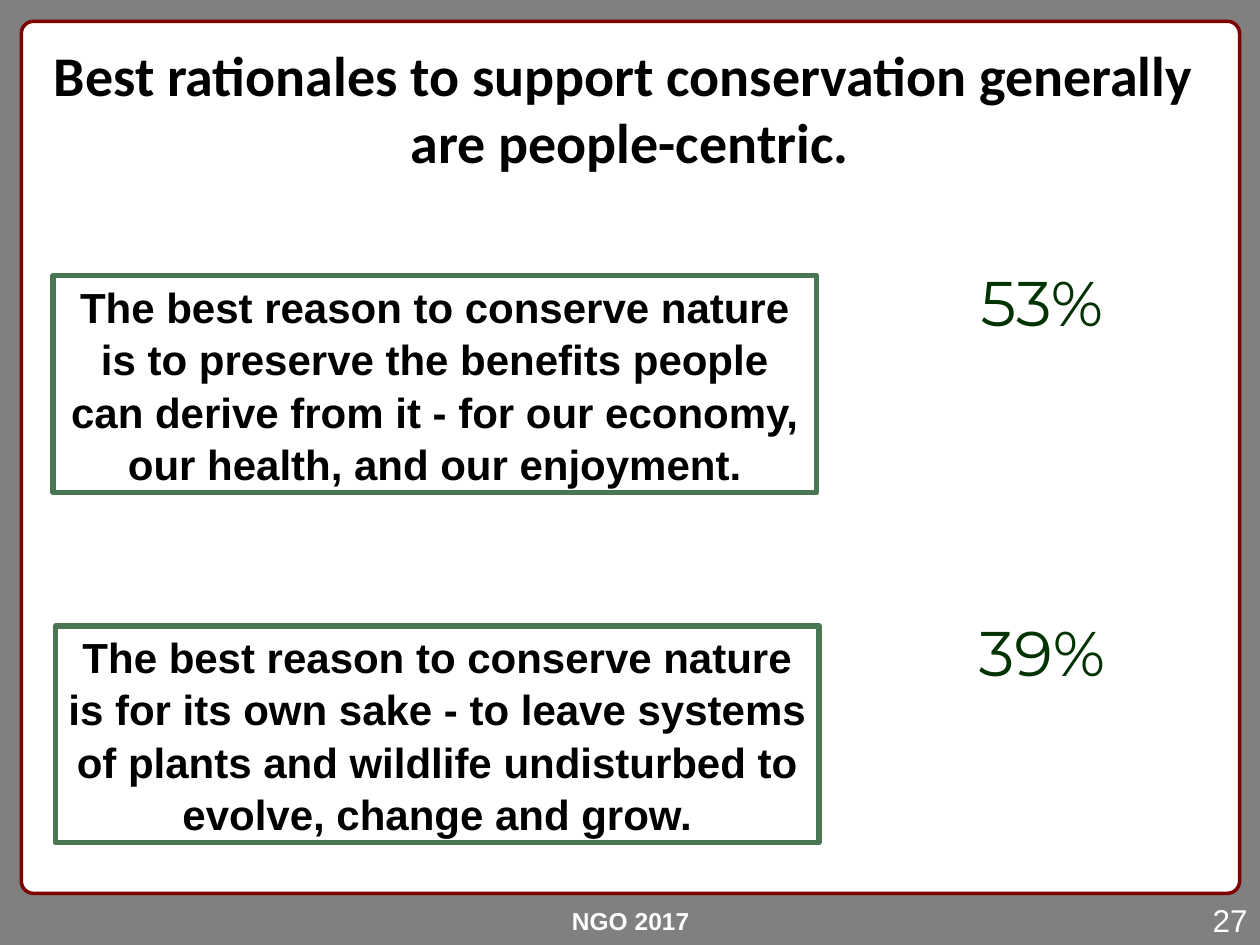
import pptx
import pptx.util
import pptx.dml.color
import pptx.enum.shapes
import pptx.enum.text

Cm = pptx.util.Cm
Pt = pptx.util.Pt
SHAPE = pptx.enum.shapes.MSO_SHAPE
ALIGN = pptx.enum.text.PP_ALIGN
ANCHOR = pptx.enum.text.MSO_ANCHOR
HUES = {"grey": "808080", "white": "FFFFFF", "red": "800000",
        "green": "4B7654", "dark": "003300", "black": "000000"}


def tint(name):
    return pptx.dml.color.RGBColor.from_string(HUES[name])


def write(text, box, size, font="Arial", hue="black", bold=False,
          align=ALIGN.CENTER, anchor=ANCHOR.TOP, wrap=True, gap=None, edge=None):
    """Add text in box (left, top, width, height in cm), framed if edge is given."""
    area = [Cm(n) for n in box]
    if edge:
        shape = slide.shapes.add_shape(SHAPE.RECTANGLE, *area)
        shape.shadow.inherit = False
        shape.fill.solid()
        shape.fill.fore_color.rgb = tint("white")
        shape.line.color.rgb = tint(edge)
        shape.line.width = Pt(3)
    else:
        shape = slide.shapes.add_textbox(*area)
    frame = shape.text_frame
    frame.word_wrap = wrap
    frame.vertical_anchor = anchor
    frame.text = text
    for para in frame.paragraphs:
        para.alignment = align
        if gap:
            para.line_spacing = gap
        for run in para.runs:
            run.font.name = font
            run.font.size = Pt(size)
            run.font.bold = bold
            run.font.color.rgb = tint(hue)


deck = pptx.Presentation()
deck.slide_width, deck.slide_height = Cm(25.4), Cm(19.05)
slide = deck.slides.add_slide(deck.slide_layouts[6])
slide.background.fill.solid()
slide.background.fill.fore_color.rgb = tint("grey")

panel = slide.shapes.add_shape(
    SHAPE.ROUNDED_RECTANGLE, Cm(0.43), Cm(0.43), Cm(24.56), Cm(17.58))
panel.adjustments[0] = 0.014
panel.shadow.inherit = False
panel.fill.solid()
panel.fill.fore_color.rgb = tint("white")
panel.line.color.rgb = tint("red")
panel.line.width = Pt(2)

write("NGO 2017", (6.15, 18.14, 13.13, 0.84), 14, hue="white", bold=True,
      anchor=ANCHOR.MIDDLE, wrap=False)
write("27", (21.49, 18.03, 3.91, 1.02), 18, hue="white", align=ALIGN.RIGHT,
      anchor=ANCHOR.MIDDLE)
write("Best rationales to support conservation generally \nare people-centric.",
      (0.43, 0.69, 24.54, 3), 32, font="Calibri", bold=True)

reasons = [
    (1.07, 5.56, "53%",
     "The best reason to conserve nature is to preserve the benefits people "
     "can derive from it ‐ for our economy, our health, and our enjoyment."),
    (1.12, 12.62, "39%",
     "The best reason to conserve nature is for its own sake ‐ to leave systems "
     "of plants and wildlife undisturbed to evolve, change and grow."),
]
for left, top, share, reason in reasons:
    write(reason, (left, top, 15.39, 4.37), 24, bold=True,
          anchor=ANCHOR.MIDDLE, gap=1.04, edge="green")
    write(share, (17.98, top - 0.38, 6.05, 5.11), 36, font="Montserrat",
          hue="dark", wrap=False)

deck.save("out.pptx")
